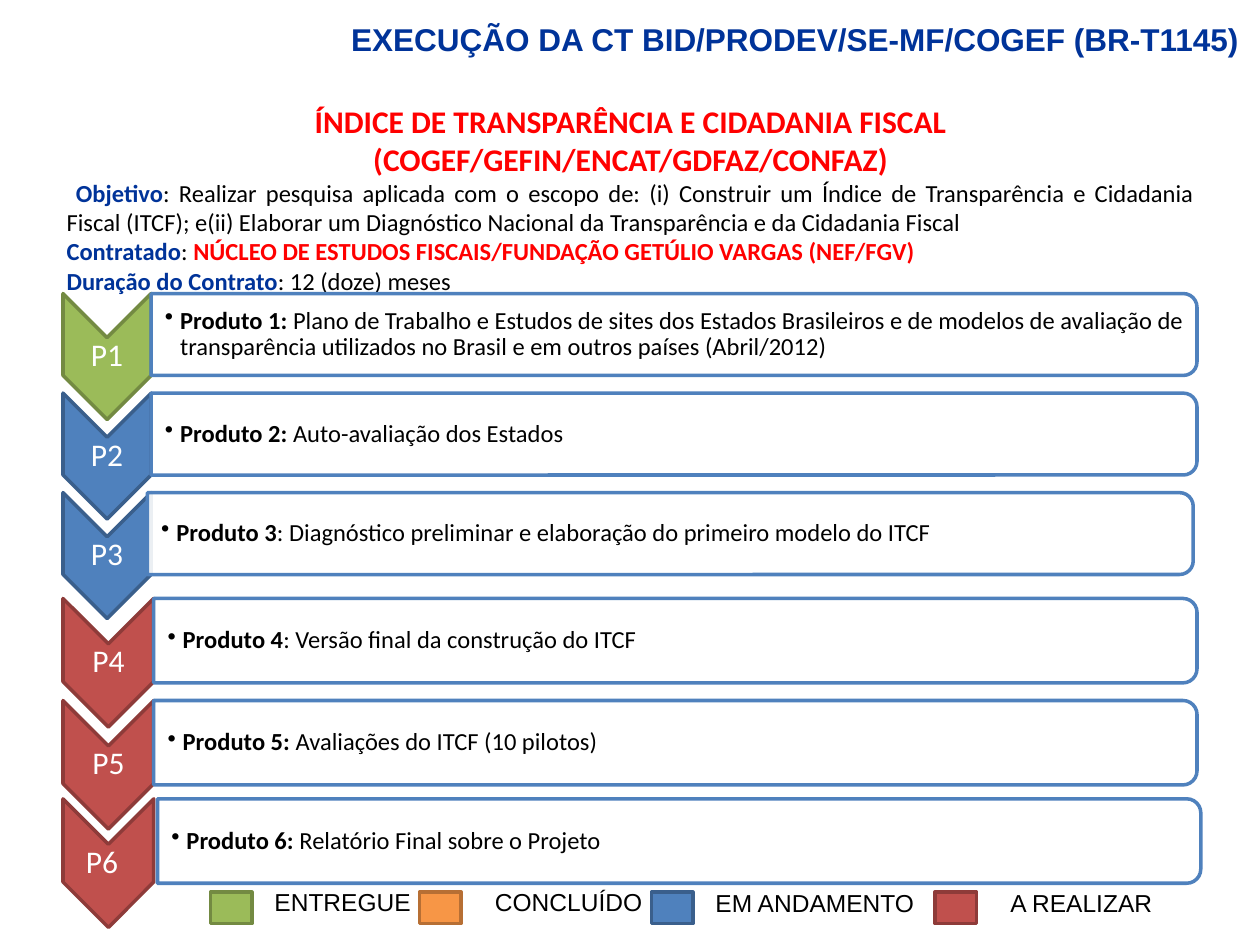
import pptx
import pptx.dml.color
import pptx.enum.shapes
import pptx.enum.text
import pptx.oxml
import pptx.oxml.ns
import pptx.util
from pptx.dml.color import RGBColor
from pptx.enum.shapes import MSO_SHAPE
from pptx.enum.text import MSO_ANCHOR, PP_ALIGN
from pptx.util import Inches, Pt

NAVY = RGBColor(0x00, 0x33, 0x99)
RED = RGBColor(0xFF, 0x00, 0x00)
BLACK = RGBColor(0x00, 0x00, 0x00)
WHITE = RGBColor(0xFF, 0xFF, 0xFF)
BLUE = RGBColor(0x4F, 0x81, 0xBD)
DELIVERED = (RGBColor(0x9B, 0xBB, 0x59), RGBColor(0x73, 0x8A, 0x42))
COMPLETED = (RGBColor(0xF7, 0x96, 0x46), RGBColor(0xB7, 0x6F, 0x34))
ONGOING = (BLUE, RGBColor(0x3A, 0x5F, 0x8C))
PENDING = (RGBColor(0xC0, 0x50, 0x4D), RGBColor(0x8E, 0x3B, 0x39))

TITLE = "EXECUÇÃO DA CT BID/PRODEV/SE-MF/COGEF (BR-T1145)"
SUMMARY = [
    (PP_ALIGN.CENTER, 18, [
        ("ÍNDICE DE TRANSPARÊNCIA E CIDADANIA FISCAL (COGEF/GEFIN/ENCAT/GDFAZ/CONFAZ)", RED, True)]),
    (PP_ALIGN.JUSTIFY, 14, [
        (" ", BLACK, False),
        ("Objetivo", NAVY, True),
        (": Realizar pesquisa aplicada com o escopo de: (i) Construir um Índice de Transparência e "
         "Cidadania Fiscal (ITCF); e(ii) Elaborar um Diagnóstico Nacional da Transparência e da "
         "Cidadania Fiscal", BLACK, False)]),
    (PP_ALIGN.JUSTIFY, 14, [
        ("Contratado", NAVY, True),
        (": ", BLACK, False),
        ("NÚCLEO DE ESTUDOS FISCAIS/FUNDAÇÃO GETÚLIO VARGAS (NEF/FGV)", RED, True)]),
    (PP_ALIGN.JUSTIFY, 14, [
        ("Duração do Contrato", NAVY, True),
        (": 12 (doze) meses", BLACK, False)]),
]
PRODUCTS = [
    (2.33, 0.7, 1.2, 0, DELIVERED, "Produto 1: ",
     "Plano de Trabalho e Estudos de sites dos Estados Brasileiros e de modelos de avaliação de "
     "transparência utilizados no Brasil e em outros países (Abril/2012)"),
    (3.12, 0.7, 1.2, 0, ONGOING, "Produto 2: ", "Auto-avaliação dos Estados"),
    (3.91, 0.7, 1.17, 0, ONGOING, "Produto 3",
     ": Diagnóstico preliminar e elaboração do primeiro modelo do ITCF"),
    (4.75, 0.72, 1.22, 0, PENDING, "Produto 4", ": Versão final da construção do ITCF"),
    (5.56, 0.72, 1.22, 0, PENDING, "Produto 5: ", "Avaliações do ITCF (10 pilotos)"),
    (6.34, 0.72, 1.25, -0.05, PENDING, "Produto 6: ", "Relatório Final sobre o Projeto"),
]
LEGEND = [
    (1.67, 2.08, 6.99, 1.5, DELIVERED, "ENTREGUE"),
    (3.33, 3.83, 6.99, 1.5, COMPLETED, "CONCLUÍDO"),
    (5.17, 5.58, 7, 1.92, ONGOING, "EM ANDAMENTO"),
    (7.42, 7.92, 7, 1.92, PENDING, "A REALIZAR"),
]


def add_text(slide, left, top, width, height, margins=(0.1, 0.05, 0.1, 0.05), anchor=MSO_ANCHOR.TOP):
    box = slide.shapes.add_textbox(Inches(left), Inches(top), Inches(width), Inches(height))
    frame = box.text_frame
    frame.word_wrap = True
    frame.vertical_anchor = anchor
    frame.margin_left, frame.margin_top, frame.margin_right, frame.margin_bottom = map(Inches, margins)
    return frame


def add_run(paragraph, text, size, color, bold=False, font="Calibri"):
    run = paragraph.add_run()
    run.text = text
    run.font.name = font
    run.font.size = Pt(size)
    run.font.bold = bold
    run.font.color.rgb = color


def set_indent(paragraph, margin, indent, bullet=None):
    properties = paragraph._p.get_or_add_pPr()
    properties.set("marL", str(Inches(margin)))
    properties.set("indent", str(Inches(indent)))
    if bullet:
        properties.append(pptx.oxml.parse_xml(
            f'<a:buChar {pptx.oxml.ns.nsdecls("a")} char="{bullet}"/>'))


def add_outlined(slide, kind, left, top, width, height, fill, line, turned=False):
    if turned:
        left, top = left + (width - height) / 2, top + (height - width) / 2
        width, height = height, width
    shape = slide.shapes.add_shape(kind, Inches(left), Inches(top), Inches(width), Inches(height))
    shape.rotation = 90 if turned else 0
    shape.shadow.inherit = False
    shape.fill.solid()
    shape.fill.fore_color.rgb = fill
    shape.line.color.rgb = line
    shape.line.width = Pt(2)
    return shape


def add_title(slide, left, top, width, height):
    paragraph = add_text(slide, left, top, width, height, (0.26, 0.16, 0.1, 0.05)).paragraphs[0]
    paragraph.alignment = PP_ALIGN.CENTER
    add_run(paragraph, TITLE, 18, NAVY, True, "Arial")


def add_summary(slide, left, top, width, height):
    frame = add_text(slide, left, top, width, height)
    for index, (alignment, size, runs) in enumerate(SUMMARY):
        paragraph = frame.paragraphs[0] if index == 0 else frame.add_paragraph()
        paragraph.alignment = alignment
        set_indent(paragraph, 0.1, 0)
        for text, color, bold in runs:
            add_run(paragraph, text, size, color, bold)


def add_product(slide, number, left, product):
    top, chevron_width, body_left, label_shift, (fill, line), name, description = product
    chevron_height = chevron_width + 0.3
    body_width, body_height = 9 - chevron_width, chevron_width - 0.05

    add_outlined(slide, MSO_SHAPE.CHEVRON, left, top, chevron_width, chevron_height, fill, line, True)
    label = add_text(slide, left + label_shift, top + chevron_width / 2, chevron_width, 0.3,
                     (0.01,) * 4, MSO_ANCHOR.MIDDLE).paragraphs[0]
    label.alignment = PP_ALIGN.CENTER
    label.line_spacing = 0.9
    add_run(label, f"P{number}", 18, WHITE)

    body = add_outlined(slide, MSO_SHAPE.ROUND_2_SAME_RECTANGLE, body_left, top,
                        body_width, body_height, WHITE, BLUE, True)
    color = body.fill._xPr.find(".//" + pptx.oxml.ns.qn("a:srgbClr"))
    color.append(pptx.oxml.parse_xml(f'<a:alpha {pptx.oxml.ns.nsdecls("a")} val="90000"/>'))
    text = add_text(slide, body_left, top + 0.03, body_width - 0.03, body_height - 0.06,
                    (0.11, 0.01, 0.01, 0.01), MSO_ANCHOR.MIDDLE).paragraphs[0]
    set_indent(text, 0.12, -0.12, "•")
    text.line_spacing = 0.9
    add_run(text, name, 14, BLACK, True)
    add_run(text, description, 14, BLACK)


def add_legend(slide, top):
    for swatch_left, label_left, label_top, label_width, (fill, line), label in LEGEND:
        add_outlined(slide, MSO_SHAPE.RECTANGLE, swatch_left, top, 0.33, 0.25, fill, line)
        paragraph = add_text(slide, label_left, label_top, label_width, 0.34).paragraphs[0]
        add_run(paragraph, label, 14, BLACK, font="Arial")


def main():
    presentation = pptx.Presentation()
    presentation.slide_width = Inches(10)
    presentation.slide_height = Inches(7.5)
    slide = presentation.slides.add_slide(presentation.slide_layouts[6])
    add_title(slide, 2.42, 0, 7.62, 0.5)
    add_summary(slide, 0.33, 0.76, 9.25, 1.95)
    for number, product in enumerate(PRODUCTS, 1):
        add_product(slide, number, 0.5, product)
    add_legend(slide, 7.08)
    presentation.save("out.pptx")


if __name__ == "__main__":
    main()
